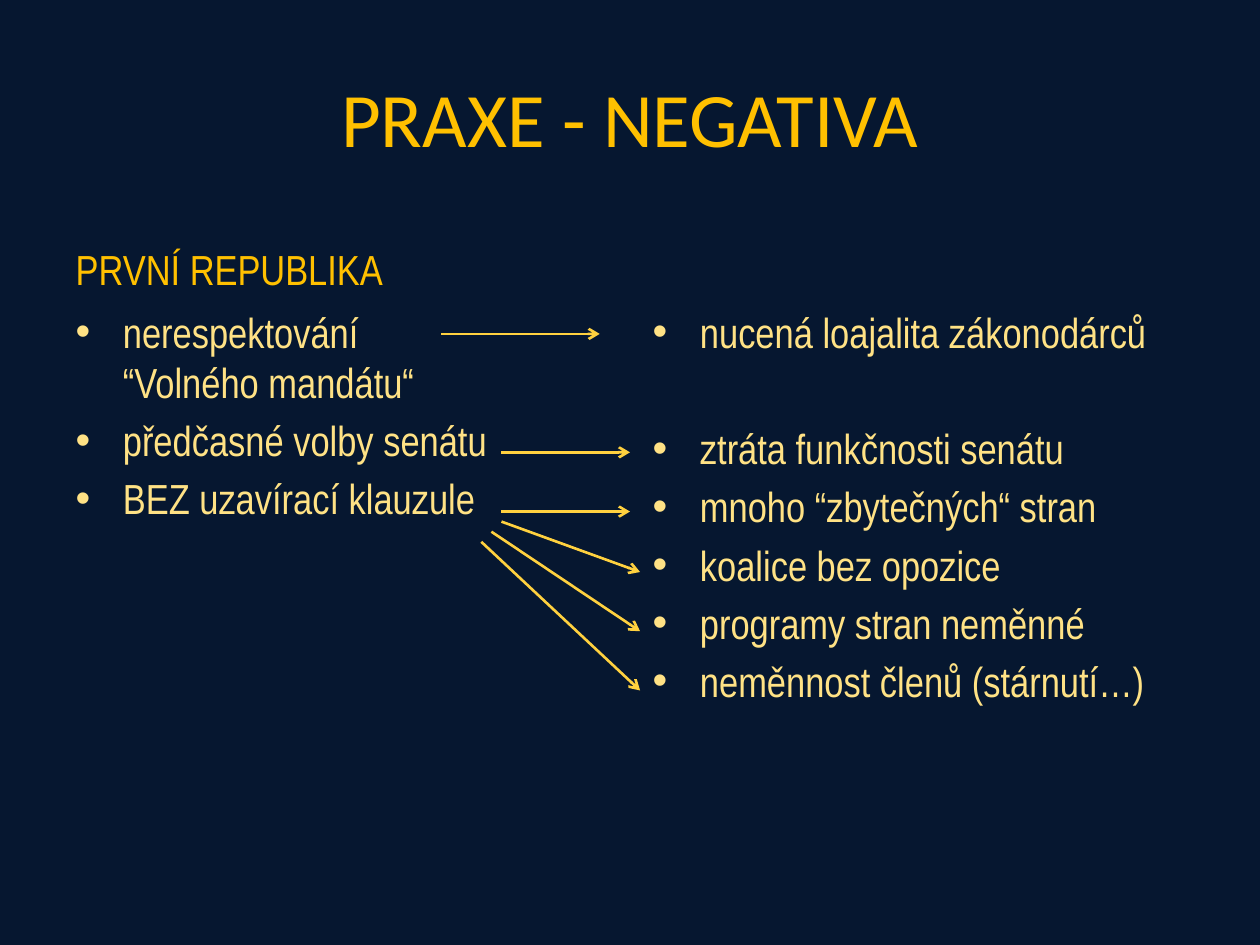
import pptx
import pptx.dml.color
import pptx.enum.shapes
import pptx.enum.text
import pptx.oxml.ns
import pptx.util
from lxml import etree
from pptx.util import Inches

BACKGROUND = "061730"
GOLD = "FFC000"
PALE_GOLD = "FFE285"
ARROW_GOLD = "FFD13F"
PARAGRAPH_GAP = 4.4
SKIPPED_LINE_GAP = 37.9


def set_color(color_format, value):
    color_format.rgb = pptx.dml.color.RGBColor.from_string(value)


def place(shape, box):
    shape.left, shape.top, shape.width, shape.height = [Inches(length) for length in box]


def write_text(paragraph, text, font="Arial Narrow", size=24, color=PALE_GOLD,
               space_before=PARAGRAPH_GAP, alignment=None):
    paragraph.alignment = alignment
    paragraph.space_before = pptx.util.Pt(space_before)
    run = paragraph.add_run()
    run.text = text
    run.font.name = font
    run.font.size = pptx.util.Pt(size)
    run.font.bold = False
    set_color(run.font.color, color)


def fill_placeholder(shape, box, anchor):
    place(shape, box)
    frame = shape.text_frame
    frame.word_wrap = True
    frame.auto_size = pptx.enum.text.MSO_AUTO_SIZE.NONE
    frame.vertical_anchor = anchor
    return frame


def build_title(shape, box, text):
    frame = fill_placeholder(shape, box, pptx.enum.text.MSO_ANCHOR.MIDDLE)
    write_text(frame.paragraphs[0], text, font="Calibri", size=44, color=GOLD,
               space_before=0, alignment=pptx.enum.text.PP_ALIGN.CENTER)


def build_heading(shape, box, text):
    frame = fill_placeholder(shape, box, pptx.enum.text.MSO_ANCHOR.BOTTOM)
    write_text(frame.paragraphs[0], text, color=GOLD)


def build_list(shape, box, items, gaps={}):
    frame = fill_placeholder(shape, box, pptx.enum.text.MSO_ANCHOR.TOP)
    for index, item in enumerate(items):
        paragraph = frame.add_paragraph() if index else frame.paragraphs[0]
        write_text(paragraph, item, space_before=gaps.get(index, PARAGRAPH_GAP))


def add_arrow(slide, start, end):
    connector = slide.shapes.add_connector(
        pptx.enum.shapes.MSO_CONNECTOR.STRAIGHT,
        *[Inches(length) for length in start + end])
    connector.line.width = pptx.util.Pt(1.5)
    set_color(connector.line.color, ARROW_GOLD)
    qualified_name = pptx.oxml.ns.qn
    etree.SubElement(connector.line._get_or_add_ln(), qualified_name("a:tailEnd"), type="arrow")
    etree.SubElement(connector._element.spPr, qualified_name("a:effectLst"))


def build_arrows(slide):
    add_arrow(slide, (3.5, 2.65), (4.76, 2.65))
    for top in (3.59, 4.06):
        add_arrow(slide, (3.98, top), (5, top))
    for index in range(3):
        add_arrow(slide, (3.98 - 0.08 * index, 4.14 + 0.08 * index),
                  (5.08, 4.54 + 0.47 * index))


def main():
    presentation = pptx.Presentation()
    presentation.slide_width = Inches(10)
    presentation.slide_height = Inches(7.5)
    comparison_layout = presentation.slide_layouts[4]
    slide = presentation.slides.add_slide(comparison_layout)
    slide.background.fill.solid()
    set_color(slide.background.fill.fore_color, BACKGROUND)

    title, heading, causes, unused_heading, effects = slide.placeholders
    unused_heading.element.getparent().remove(unused_heading.element)

    build_title(title, (0.5, 0.3, 9, 1.25), "PRAXE - NEGATIVA")
    build_heading(heading, (0.5, 1.68, 4.42, 0.7), "PRVNÍ REPUBLIKA")
    build_list(causes, (0.5, 2.38, 3.48, 4.99), [
        "nerespektování “Volného mandátu“",
        "předčasné volby senátu",
        "BEZ uzavírací klauzule",
    ])
    build_list(effects, (5.08, 2.38, 4.8, 4.68), [
        "nucená loajalita zákonodárců",
        "ztráta funkčnosti senátu",
        "mnoho “zbytečných“ stran",
        "koalice bez opozice",
        "programy stran neměnné",
        "neměnnost členů (stárnutí…)",
    ], gaps={1: SKIPPED_LINE_GAP})
    build_arrows(slide)
    presentation.save("out.pptx")


if __name__ == "__main__":
    main()
